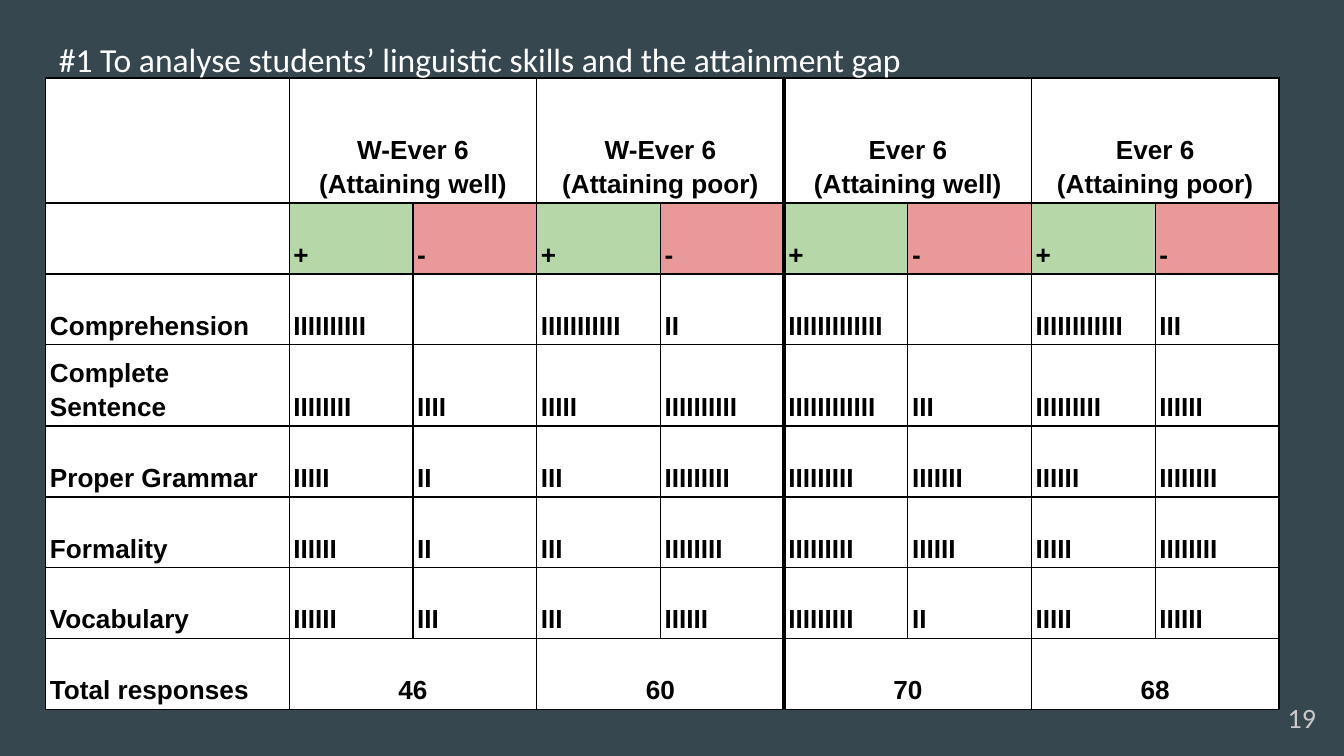
import lxml.etree
import pptx
import pptx.dml.color
import pptx.enum.text
import pptx.oxml.ns
import pptx.util

Pt = pptx.util.Pt
RGB = pptx.dml.color.RGBColor.from_string
ALIGN = pptx.enum.text.PP_ALIGN
ANCHOR = pptx.enum.text.MSO_ANCHOR

THEME = {
    "background": "37474F", "title": "FFFFFF", "page": "CACACA",
    "ink": "000000", "cell": "FFFFFF", "plus": "B6D7A8", "minus": "EA9999",
    "title_size": 18, "page_size": 15, "cell_size": 14,
    "slide_font": "Calibri", "table_font": "Arial",
    "thin": 0.75, "thick": 2.25,
}


def style_paragraph(paragraph, font, size, color, bold=False, align=ALIGN.LEFT, spacing=1.0):
    paragraph.alignment = align
    paragraph.line_spacing = spacing
    paragraph.font.name = font
    paragraph.font.size = Pt(size)
    paragraph.font.bold = bold
    paragraph.font.color.rgb = RGB(color)


def draw_border(cell, side, width):
    qn = pptx.oxml.ns.qn
    line = lxml.etree.SubElement(cell._tc.get_or_add_tcPr(), qn(f"a:ln{side}"), w=str(Pt(width)))
    fill = lxml.etree.SubElement(line, qn("a:solidFill"))
    lxml.etree.SubElement(fill, qn("a:srgbClr"), val=THEME["ink"])


groups = ["W-Ever 6 (Attaining well)", "W-Ever 6 (Attaining poor)",
          "Ever 6\n(Attaining well)", "Ever 6\n(Attaining poor)"]
tallies = {
    "Comprehension": [10, 0, 11, 2, 13, 0, 12, 3],
    "Complete Sentence": [8, 4, 5, 10, 12, 3, 9, 6],
    "Proper Grammar": [5, 2, 3, 9, 9, 7, 6, 8],
    "Formality": [6, 2, 3, 8, 9, 6, 5, 8],
    "Vocabulary": [6, 3, 3, 6, 9, 2, 5, 6],
}
totals = ["46", "60", "70", "68"]

rows = [[""] + [text for group in groups for text in (group, "")],
        [""] + ["+", "-"] * len(groups)]
rows += [[skill] + ["I" * count for count in counts] for skill, counts in tallies.items()]
rows.append(["Total responses"] + [text for total in totals for text in (total, "")])

row_heights = [67, 38, 38, 43.5, 38, 38, 38, 38]
column_widths = [130.5] + [66.3] * 8
merged_rows = (0, len(rows) - 1)
sign_fills = {"+": THEME["plus"], "-": THEME["minus"]}

deck = pptx.Presentation()
deck.slide_width, deck.slide_height = Pt(720), Pt(405)
slide = deck.slides.add_slide(deck.slide_layouts[6])
slide.background.fill.solid()
slide.background.fill.fore_color.rgb = RGB(THEME["background"])

results = slide.shapes.add_table(
    len(rows), len(column_widths), Pt(24.5), Pt(41.8),
    Pt(sum(column_widths)), Pt(sum(row_heights))).table
results.first_row = False
results.horz_banding = False
for column, width in zip(results.columns, column_widths):
    column.width = Pt(width)
for row, height in zip(results.rows, row_heights):
    row.height = Pt(height)

for r, texts in enumerate(rows):
    for c, text in enumerate(texts):
        cell = results.cell(r, c)
        grouped = r in merged_rows and c > 0
        if grouped and c % 2:
            cell.merge(results.cell(r, c + 1))
        last = c + 1 if grouped and c % 2 else c
        draw_border(cell, "L", THEME["thick" if c == 5 else "thin"])
        draw_border(cell, "R", THEME["thick" if last == 4 else "thin"])
        draw_border(cell, "T", THEME["thin"])
        draw_border(cell, "B", THEME["thin"])
        cell.fill.solid()
        cell.fill.fore_color.rgb = RGB(sign_fills.get(text, THEME["cell"]))
        cell.margin_left = cell.margin_right = cell.margin_top = cell.margin_bottom = Pt(2.25)
        cell.vertical_anchor = ANCHOR.BOTTOM
        if text:
            cell.text = text
        for paragraph in cell.text_frame.paragraphs:
            style_paragraph(paragraph, THEME["table_font"], THEME["cell_size"], THEME["ink"],
                            True, ALIGN.CENTER if grouped else ALIGN.LEFT, 1.15)

captions = [
    ("#1 To analyse students’ linguistic skills and the attainment gap",
     (24.5, 2.9, 671, 45.4), "title", ALIGN.LEFT, ANCHOR.TOP, 1.5),
    ("19", (668.9, 368.6, 43.2, 31), "page", ALIGN.RIGHT, ANCHOR.MIDDLE, 1.0),
]
for text, box, role, align, anchor, spacing in captions:
    frame = slide.shapes.add_textbox(*map(Pt, box)).text_frame
    frame.word_wrap = True
    frame.vertical_anchor = anchor
    frame.margin_left = frame.margin_right = frame.margin_top = frame.margin_bottom = Pt(7.2)
    frame.text = text
    style_paragraph(frame.paragraphs[0], THEME["slide_font"], THEME[f"{role}_size"],
                    THEME[role], align=align, spacing=spacing)

deck.save("out.pptx")
